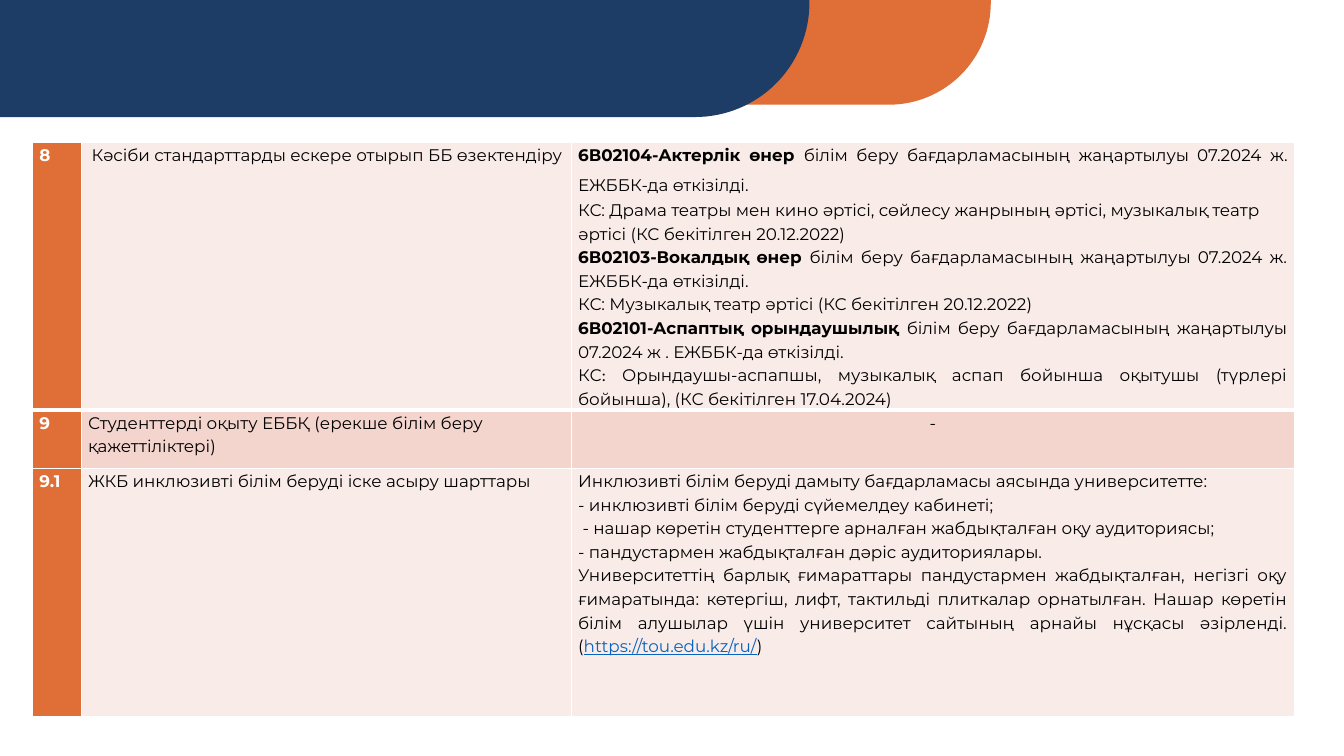
import math
from dataclasses import dataclass

import pptx
import pptx.dml.color
import pptx.enum.text
import pptx.oxml
import pptx.oxml.ns
import pptx.util
from pptx.util import Cm

ALIGN = pptx.enum.text.PP_ALIGN


@dataclass(frozen=True)
class Theme:
    orange: str = "E06E37"
    navy: str = "1D3D66"
    pale: str = "F9EBE8"
    rose: str = "F3D5CE"
    white: str = "FFFFFF"
    black: str = "000000"
    link: str = "0563C1"
    font: str = "Montserrat"
    colon_font: str = "Calibri"
    body: float = 12
    small_space: float = 9
    indent_space: float = 10
    large_space: float = 16
    line_spacing: float = 1.15
    thin: float = 1
    thick: float = 3


THEME = Theme()
BOLD = {"bold": True}
JUSTIFY, LEFT, CENTER = ALIGN.JUSTIFY, ALIGN.LEFT, ALIGN.CENTER

# Each cell is a list of paragraphs: (alignment, run, run, ...).
# A run is plain text or a pair of text and the font settings it changes.
ROWS = [
    (
        "8",
        [(LEFT, (" ", {"size": THEME.indent_space}),
          "Кәсіби стандарттарды ескере отырып ББ өзектендіру")],
        [
            (JUSTIFY, ("6В02104-Актерлік өнер ", BOLD),
             "білім беру бағдарламасының жаңартылуы",
             (" ", {"size": THEME.small_space}),
             "07.2024 ж. ЕЖББК-да өткізілді.",
             (" ", {"size": THEME.large_space})),
            (LEFT, "КС: Драма театры мен кино әртісі, сөйлесу жанрының әртісі, "
                   "музыкалық театр әртісі (КС бекітілген 20.12.2022)"),
            (JUSTIFY, ("6В02103-Вокалдық өнер ", BOLD),
             "білім беру бағдарламасының жаңартылуы 07.2024 ж. ЕЖББК-да өткізілді."),
            (JUSTIFY, "КС: Музыкалық театр әртісі (КС бекітілген 20.12.2022)"),
            (JUSTIFY, ("6В02101-Аспаптық орындаушылық ", BOLD),
             "білім беру бағдарламасының жаңартылуы 07.2024 ж . ЕЖББК-да өткізілді."),
            (JUSTIFY, "КС", (": ", {"name": THEME.colon_font}),
             "Орындаушы-аспапшы, музыкалық аспап бойынша оқытушы "
             "(түрлері бойынша), (КС бекітілген 17.04.2024)"),
        ],
    ),
    (
        "9",
        [(LEFT, "Студенттерді оқыту ЕББҚ (ерекше білім беру қажеттіліктері)")],
        [(CENTER, "-")],
    ),
    (
        "9.1",
        [(LEFT, "ЖКБ инклюзивті білім беруді іске асыру шарттары")],
        [
            (JUSTIFY, "Инклюзивті білім беруді дамыту бағдарламасы аясында университетте:"),
            (JUSTIFY, "- инклюзивті білім беруді сүйемелдеу кабинеті;"),
            (JUSTIFY, " - нашар көретін студенттерге арналған жабдықталған оқу аудиториясы; "),
            (JUSTIFY, "- пандустармен жабдықталған дәріс аудиториялары."),
            (JUSTIFY, "Университеттің барлық ғимараттары пандустармен жабдықталған, "
                      "негізгі оқу ғимаратында: көтергіш, лифт, тактильді плиткалар "
                      "орнатылған. Нашар көретін білім алушылар үшін университет "
                      "сайтының арнайы нұсқасы әзірленді. (",
             ("https://tou.edu.kz/ru/", {"color": THEME.link, "underline": True}),
             ")"),
        ],
    ),
]


def rgb(color):
    return pptx.dml.color.RGBColor.from_string(color)


def style_font(font, color=None, **settings):
    """Apply the given settings; sizes are in points."""
    if "size" in settings:
        settings["size"] = pptx.util.Pt(settings["size"])
    for name, value in settings.items():
        setattr(font, name, value)
    if color:
        font.color.rgb = rgb(color)


def add_banner(slide, left, top, width, height, radius, color):
    """Draw a band whose lower right corner is a quarter circle."""
    steps = 32
    arc = []
    for step in range(steps + 1):
        angle = math.pi / 2 * step / steps
        arc.append((left + width - radius + radius * math.cos(angle),
                    top + height - radius + radius * math.sin(angle)))
    builder = slide.shapes.build_freeform(left, top)
    builder.add_line_segments([(left + width, top), *arc, (left, top + height)])
    shape = builder.convert_to_shape()
    shape.shadow.inherit = False
    shape.fill.solid()
    shape.fill.fore_color.rgb = rgb(color)
    shape.line.fill.background()


def set_borders(cell, **widths):
    """Draw white cell borders; widths are in points, keyed L, R, T, B."""
    properties = cell._tc.get_or_add_tcPr()
    for index, (side, width) in enumerate(widths.items()):
        properties.insert(index, pptx.oxml.parse_xml(
            f'<a:ln{side} {pptx.oxml.ns.nsdecls("a")} w="{pptx.util.Pt(width)}">'
            f'<a:solidFill><a:srgbClr val="{THEME.white}"/></a:solidFill>'
            f'</a:ln{side}>'))


def fill_cell(cell, paragraphs, fill, color, bold=False):
    cell.fill.solid()
    cell.fill.fore_color.rgb = rgb(fill)
    cell.margin_left = cell.margin_right = Cm(0.17)
    cell.margin_top = cell.margin_bottom = 0
    frame = cell.text_frame
    for index, (alignment, *runs) in enumerate(paragraphs):
        paragraph = frame.add_paragraph() if index else frame.paragraphs[0]
        paragraph.alignment = alignment
        paragraph.line_spacing = THEME.line_spacing
        style_font(paragraph.font, color, name=THEME.font, size=THEME.body, bold=bold)
        for item in runs:
            text, settings = (item, {}) if isinstance(item, str) else item
            run = paragraph.add_run()
            run.text = text
            style_font(run.font, **settings)


def add_programme_table(slide, left, top, column_widths, row_heights):
    frame = slide.shapes.add_table(len(row_heights), len(column_widths), left, top,
                                   sum(column_widths), sum(row_heights))
    table = frame.table
    table.first_row = table.horz_banding = False
    for column, width in zip(table.columns, column_widths):
        column.width = width
    for index, (number, topic, details) in enumerate(ROWS):
        table.rows[index].height = row_heights[index]
        body_fill = THEME.rose if index % 2 else THEME.pale
        cells = [table.cell(index, column) for column in range(len(column_widths))]
        fill_cell(cells[0], [(LEFT, number)], THEME.orange, THEME.white, bold=True)
        fill_cell(cells[1], topic, body_fill, THEME.black)
        fill_cell(cells[2], details, body_fill, THEME.black)
        for cell in cells:
            set_borders(cell, L=THEME.thin, R=THEME.thin,
                        T=THEME.thick if index == 1 else THEME.thin,
                        B=THEME.thick if index == 0 else THEME.thin)


def main():
    presentation = pptx.Presentation()
    presentation.slide_width, presentation.slide_height = Cm(33.87), Cm(19.05)
    slide = presentation.slides.add_slide(presentation.slide_layouts[6])
    add_banner(slide, Cm(6.73), 0, Cm(18.24), Cm(2.64), Cm(2.57), THEME.orange)
    add_banner(slide, 0, 0, Cm(20.4), Cm(2.95), Cm(2.88), THEME.navy)
    add_programme_table(slide, Cm(0.82), Cm(3.59),
                        [Cm(1.23), Cm(12.35), Cm(18.22)],
                        [Cm(6.74), Cm(1.47), Cm(6.25)])
    presentation.save("out.pptx")


if __name__ == "__main__":
    main()
